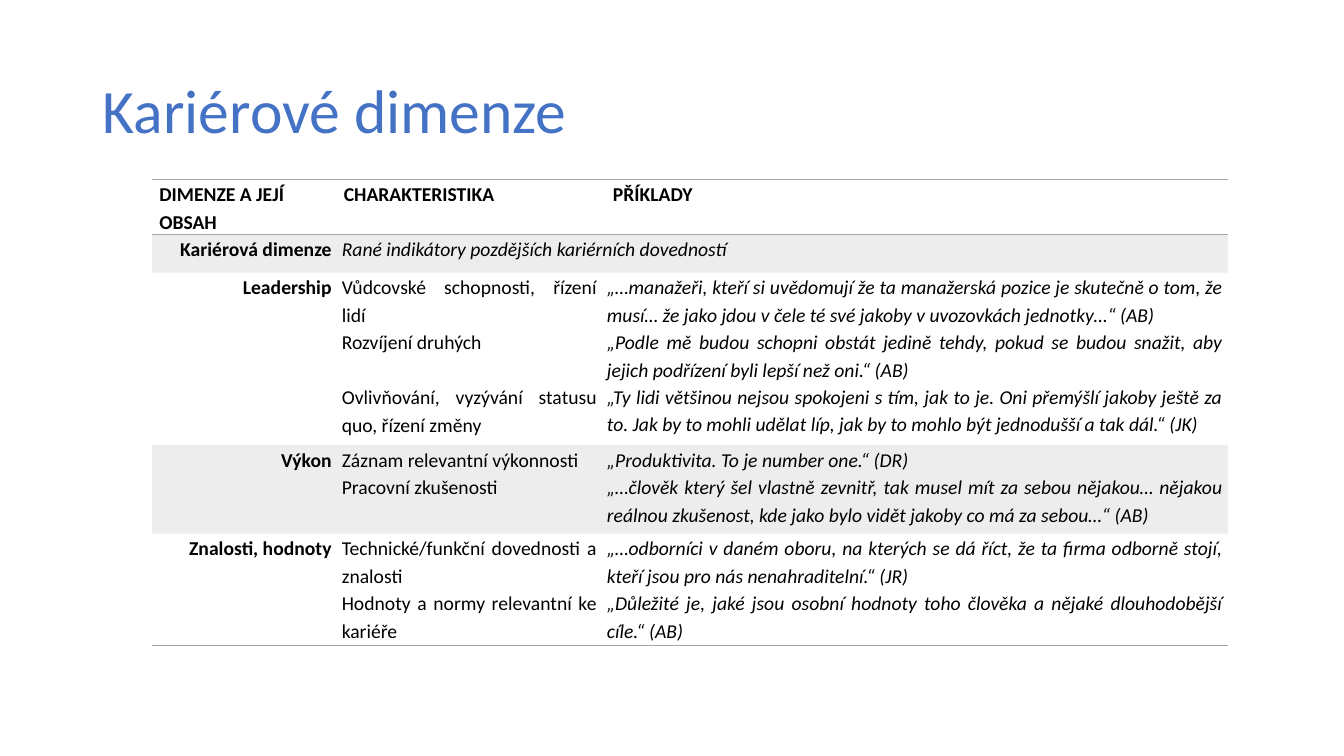
from dataclasses import dataclass

from lxml import etree
from pptx import Presentation
from pptx import util as u
from pptx.dml.color import RGBColor
from pptx.enum import text
from pptx.oxml.ns import qn


@dataclass(frozen=True)
class Theme:
    font: str = "Calibri"
    title_color: str = "4472C4"
    text_color: str = "000000"
    rule_color: str = "A5A5A5"
    band_opacity: int = 20
    title_size: int = 44
    body_size: int = 14
    rule_width: int = 1
    title_spacing: float = 0.9
    body_spacing: float = 1.15
    line_gap: float = 19.65  # height of one body line, in points


THEME = Theme()
NO_STYLE_NO_GRID = "{2D5ABB26-0587-4C30-8999-92F81FD0307C}"
LEFT, RIGHT, JUSTIFY = (
    text.PP_ALIGN.LEFT, text.PP_ALIGN.RIGHT, text.PP_ALIGN.JUSTIFY)

COLUMN_WIDTHS = (1.83, 2.63, 6.21)
ROW_HEIGHTS = (0.31, 0.38, 1.71, 0.88, 1.11)
HEADER_MARGINS = (0.07, 0.07, 0.11)
HEADERS = ("DIMENZE A JEJÍ OBSAH", "CHARAKTERISTIKA", "PŘÍKLADY")
INTRO = ("Kariérová dimenze", "Rané indikátory pozdějších kariérních dovedností")

# Dimension, characteristics, examples
DIMENSIONS = (
    ("Leadership",
     ("Vůdcovské schopnosti, řízení lidí",
      "Rozvíjení druhých",
      "Ovlivňování, vyzývání statusu quo, řízení změny"),
     ("„…manažeři, kteří si uvědomují že ta manažerská pozice je skutečně o tom, "
      "že musí… že jako jdou v čele té své jakoby v uvozovkách jednotky…“ (AB)",
      "„Podle mě budou schopni obstát jedině tehdy, pokud se budou snažit, "
      "aby jejich podřízení byli lepší než oni.“ (AB)",
      "„Ty lidi většinou nejsou spokojeni s tím, jak to je. Oni přemýšlí jakoby "
      "ještě za to. Jak by to mohli udělat líp, jak by to mohlo být jednodušší "
      "a tak dál.“ (JK)")),
    ("Výkon",
     ("Záznam relevantní výkonnosti", "Pracovní zkušenosti"),
     ("„Produktivita. To je number one.“ (DR)",
      "„…člověk který šel vlastně zevnitř, tak musel mít za sebou nějakou… nějakou "
      "reálnou zkušenost, kde jako bylo vidět jakoby co má za sebou…“ (AB)")),
    ("Znalosti, hodnoty",
     ("Technické/funkční dovednosti a znalosti",
      "Hodnoty a normy relevantní ke kariéře"),
     ("„…odborníci v daném oboru, na kterých se dá říct, že ta firma odborně "
      "stojí, kteří jsou pro nás nenahraditelní.“ (JR)",
      "„Důležité je, jaké jsou osobní hodnoty toho člověka a nějaké dlouhodobější "
      "cíle.“ (AB)")),
)


def add_run(paragraph, words, size, color, bold=False, italic=False):
    run = paragraph.add_run()
    run.text = words
    run.font.name = THEME.font
    run.font.size = u.Pt(size)
    run.font.bold = bold
    run.font.italic = italic
    run.font.color.rgb = RGBColor.from_string(color)


def write_cell(cell, lines, align, margin=0.05, bold=False, italic=False):
    cell.margin_left = cell.margin_right = u.Inches(margin)
    cell.margin_top = cell.margin_bottom = 0
    frame = cell.text_frame
    for index, line in enumerate(lines):
        paragraph = frame.add_paragraph() if index else frame.paragraphs[0]
        paragraph.alignment = align
        paragraph.line_spacing = THEME.body_spacing
        add_run(paragraph, line, THEME.body_size, THEME.text_color, bold, italic)


def add_rule(cell, side):
    """Draw a cell border; side is lnT or lnB."""
    line = etree.SubElement(cell._tc.get_or_add_tcPr(), qn("a:" + side),
                            w=str(u.Pt(THEME.rule_width)))
    fill = etree.SubElement(line, qn("a:solidFill"))
    etree.SubElement(fill, qn("a:srgbClr"), val=THEME.rule_color)


def fill_cell(cell, banded):
    if not banded:
        cell.fill.background()
        return
    cell.fill.solid()
    cell.fill.fore_color.rgb = RGBColor.from_string(THEME.rule_color)
    color = cell._tc.tcPr.find(qn("a:solidFill")).find(qn("a:srgbClr"))
    etree.SubElement(color, qn("a:alpha"), val=str(THEME.band_opacity * 1000))


def format_title(slide, words):
    title = slide.shapes.title
    title.left, title.top = u.Inches(0.92), u.Inches(0.4)
    title.width, title.height = u.Inches(11.5), u.Inches(1.45)
    frame = title.text_frame
    frame.word_wrap = True
    frame.auto_size = text.MSO_AUTO_SIZE.NONE
    frame.vertical_anchor = text.MSO_ANCHOR.MIDDLE
    paragraph = frame.paragraphs[0]
    paragraph.alignment = LEFT
    paragraph.line_spacing = THEME.title_spacing
    add_run(paragraph, words, THEME.title_size, THEME.title_color)


def add_plain_table(slide):
    table = slide.shapes.add_table(
        len(ROW_HEIGHTS), len(COLUMN_WIDTHS), u.Inches(1.51), u.Inches(1.78),
        u.Inches(sum(COLUMN_WIDTHS)), u.Inches(sum(ROW_HEIGHTS))).table
    table.first_row = table.horz_banding = False
    table._tbl.tblPr.find(qn("a:tableStyleId")).text = NO_STYLE_NO_GRID
    for column, width in zip(table.columns, COLUMN_WIDTHS):
        column.width = u.Inches(width)
    for row, height in zip(table.rows, ROW_HEIGHTS):
        row.height = u.Inches(height)
    return table


def add_dimension_table(slide):
    table = add_plain_table(slide)

    # Rules around the header and under the last row, bands on odd rows
    last = len(ROW_HEIGHTS) - 1
    rules = {0: ("lnT", "lnB"), last: ("lnB",)}
    for index, row in enumerate(table.rows):
        for cell in row.cells:
            for side in rules.get(index, ()):
                add_rule(cell, side)
            fill_cell(cell, banded=index % 2 == 1)

    # Header
    for column, (words, margin) in enumerate(zip(HEADERS, HEADER_MARGINS)):
        write_cell(table.cell(0, column), [words], LEFT, margin, bold=True)

    # Introductory row
    table.cell(1, 1).merge(table.cell(1, 2))
    write_cell(table.cell(1, 0), INTRO[:1], RIGHT, bold=True)
    write_cell(table.cell(1, 1), INTRO[1:], JUSTIFY, italic=True)

    # Dimensions
    for row, (name, traits, examples) in enumerate(DIMENSIONS, start=2):
        write_cell(table.cell(row, 0), [name], RIGHT, bold=True)
        write_cell(table.cell(row, 1), traits, JUSTIFY)
        write_cell(table.cell(row, 2), examples, JUSTIFY, italic=True)

    # Align the last leadership trait with its example
    last_trait = table.cell(2, 1).text_frame.paragraphs[-1]
    last_trait.space_before = u.Pt(THEME.line_gap)


def main():
    presentation = Presentation()
    presentation.slide_width = u.Inches(13.33)
    presentation.slide_height = u.Inches(7.5)
    slide = presentation.slides.add_slide(presentation.slide_layouts[5])
    format_title(slide, "Kariérové dimenze")
    add_dimension_table(slide)
    presentation.save("out.pptx")


if __name__ == "__main__":
    main()
